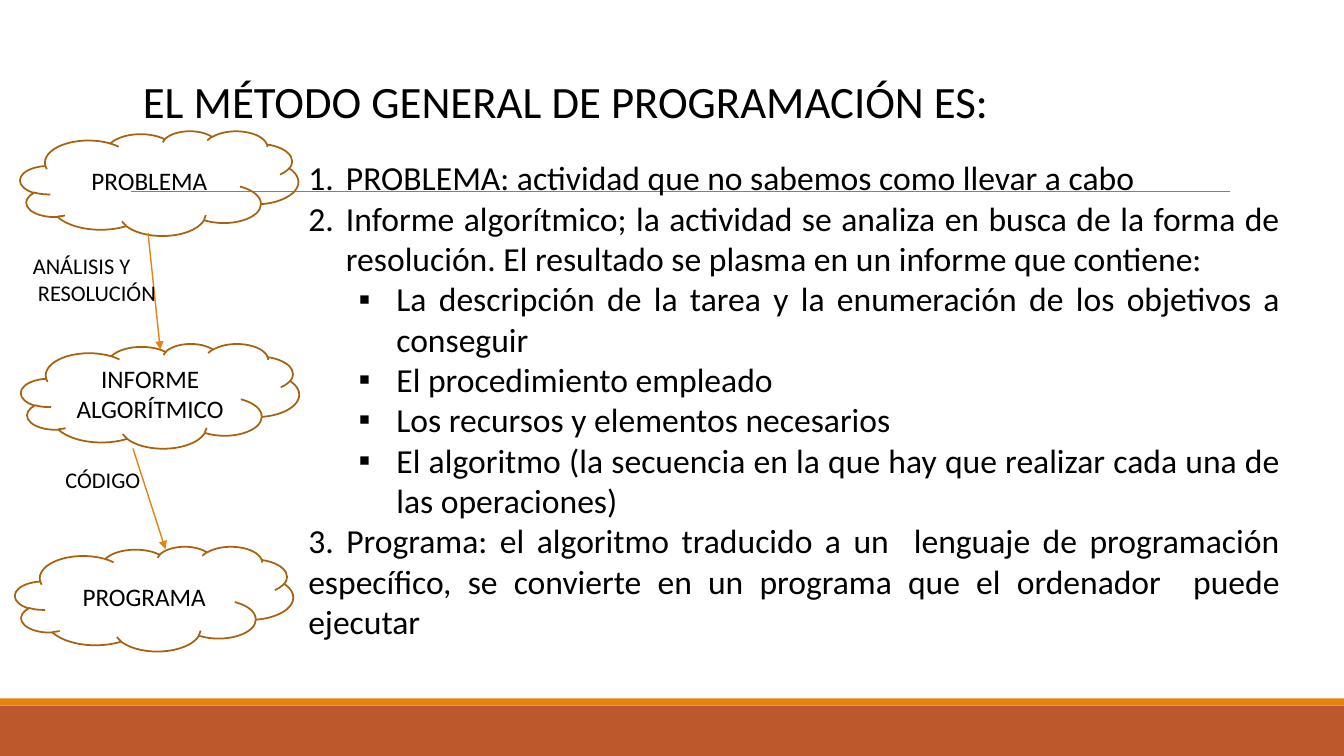
from pptx import Presentation
from pptx.dml.color import RGBColor
from pptx.enum.shapes import MSO_CONNECTOR, MSO_SHAPE
from pptx.enum.text import MSO_ANCHOR, MSO_AUTO_SIZE, PP_ALIGN
from pptx.oxml.xmlchemy import OxmlElement
from pptx.util import Cm, Pt

COLORS = {"text": "000000", "rule": "808080", "orange": "E48312",
          "rust": "BD582C", "cloud": "A9610D"}
FONT = "Calibri"
WIDTH, HEIGHT = 33.87, 19.05
HANGING = 0.95


def add_xml(parent, tag, **attrs):
    el = OxmlElement(tag)
    for key, value in attrs.items():
        el.set(key, value)
    parent.append(el)


class SlideBuilder:
    def __init__(self, slide):
        self.s = slide

    def color(self, name):
        return RGBColor.from_string(COLORS[name])

    def style(self, p, size, align):
        p.alignment = align
        for r in p.runs:
            r.font.name = FONT
            r.font.size = Pt(size)
            r.font.color.rgb = self.color("text")

    def bar(self, top, height, color):
        sp = self.s.shapes.add_shape(MSO_SHAPE.RECTANGLE, 0, Cm(top), Cm(WIDTH), Cm(height))
        sp.shadow.inherit = False
        sp.fill.solid()
        sp.fill.fore_color.rgb = self.color(color)
        sp.line.fill.background()

    def line(self, x1, y1, x2, y2, color, width, arrow=False):
        c = self.s.shapes.add_connector(MSO_CONNECTOR.STRAIGHT, Cm(x1), Cm(y1), Cm(x2), Cm(y2))
        c.line.color.rgb = self.color(color)
        c.line.width = Pt(width)
        if arrow:
            add_xml(c.line._get_or_add_ln(), "a:tailEnd", type="triangle")
        add_xml(c._element.spPr, "a:effectLst")

    def cloud(self, left, top, text):
        sp = self.s.shapes.add_shape(MSO_SHAPE.CLOUD, Cm(left), Cm(top), Cm(7.01), Cm(2.64))
        sp.shadow.inherit = False
        sp.fill.background()
        sp.line.color.rgb = self.color("cloud")
        sp.line.width = Pt(1.25)
        tf = sp.text_frame
        tf.text = text
        tf.word_wrap = True
        tf.vertical_anchor = MSO_ANCHOR.MIDDLE
        self.style(tf.paragraphs[0], 18, PP_ALIGN.CENTER)

    def text(self, left, top, width, height, lines, size, wrap=False, align=PP_ALIGN.LEFT):
        tf = self.s.shapes.add_textbox(Cm(left), Cm(top), Cm(width), Cm(height)).text_frame
        tf.text = "\n".join(lines)
        tf.word_wrap = wrap
        tf.auto_size = MSO_AUTO_SIZE.SHAPE_TO_FIT_TEXT
        for p in tf.paragraphs:
            self.style(p, size, align)
        return tf

    def bullet(self, p, kind):
        """Give a paragraph a hanging number or a second-level square."""
        p.level = 0 if kind == "number" else 1
        pPr = p._p.get_or_add_pPr()
        pPr.set("marL", str(Cm(HANGING + 1.27 * p.level)))
        pPr.set("indent", str(-Cm(HANGING)))
        if kind == "number":
            add_xml(pPr, "a:buFont", typeface="+mj-lt")
            add_xml(pPr, "a:buAutoNum", type="arabicPeriod")
        else:
            add_xml(pPr, "a:buFont", typeface="Arial")
            add_xml(pPr, "a:buChar", char="▪")


CLOUDS = [(0.51, 3.3, "PROBLEMA"),
          (0.53, 8.66, "INFORME ALGORÍTMICO"),
          (0.38, 13.77, "PROGRAMA")]

STEPS = [
    ("number", "PROBLEMA: actividad que no sabemos como llevar a cabo"),
    ("number", "Informe algorítmico; la actividad se analiza en busca de la forma de "
               "resolución. El resultado se plasma en un informe que contiene:"),
    ("square", "La descripción de la tarea y la enumeración de los objetivos a conseguir"),
    ("square", "El procedimiento empleado"),
    ("square", "Los recursos y elementos necesarios "),
    ("square", "El algoritmo (la secuencia en la que hay que realizar cada una de las "
               "operaciones)"),
    (None, "3. Programa: el algoritmo traducido a un  lenguaje de programación específico, "
           "se convierte en un programa que el ordenador  puede ejecutar"),
]


def main():
    prs = Presentation()
    prs.slide_width, prs.slide_height = Cm(WIDTH), Cm(HEIGHT)
    b = SlideBuilder(prs.slides.add_slide(prs.slide_layouts[6]))

    b.line(3.3, 4.83, 30.99, 4.83, "rule", 0.5)
    b.bar(17.78, 1.27, "rust")
    b.bar(17.6, 0.18, "orange")

    for cloud in CLOUDS:
        b.cloud(*cloud)
    b.line(3.73, 5.87, 4.04, 8.81, "orange", 1, arrow=True)
    b.text(0.58, 6.22, 3.66, 1.63, ["ANÁLISIS Y", " RESOLUCIÓN"], 16)
    b.line(3.35, 11.3, 4.17, 13.84, "orange", 1, arrow=True)
    b.text(1.4, 11.61, 2.41, 0.94, ["CÓDIGO"], 16)

    b.text(3.35, 1.73, 22.05, 1.63, ["EL MÉTODO GENERAL DE PROGRAMACIÓN ES:"], 32)
    tf = b.text(7.52, 3.84, 24.99, 12.57, [text for _, text in STEPS], 24,
                wrap=True, align=PP_ALIGN.JUSTIFY)
    for p, (kind, _) in zip(tf.paragraphs, STEPS):
        if kind:
            b.bullet(p, kind)

    prs.save("out.pptx")


if __name__ == "__main__":
    main()
